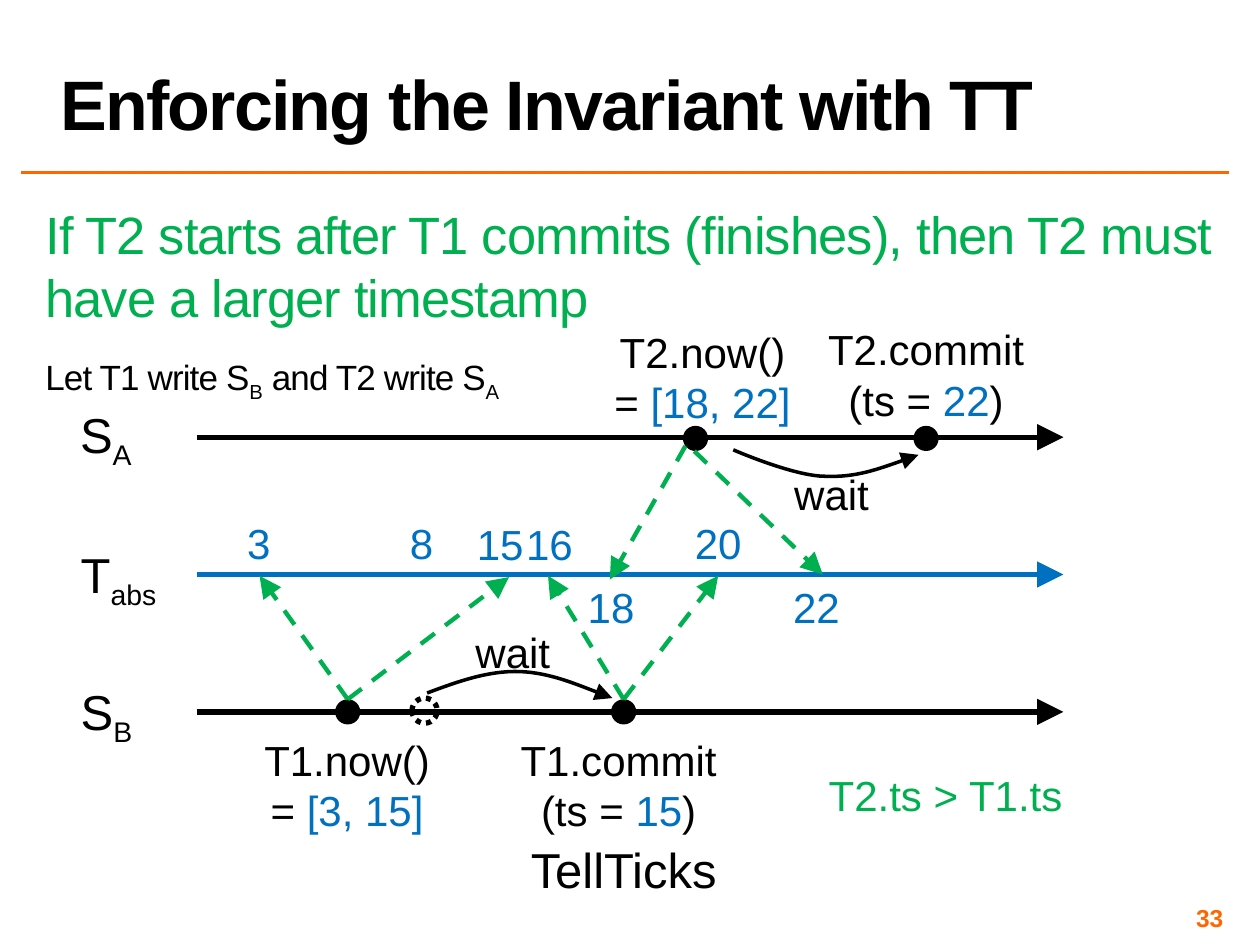
from typing import NamedTuple

from lxml.etree import SubElement
from pptx import Presentation
from pptx.dml.color import RGBColor
from pptx.enum.dml import MSO_LINE_DASH_STYLE as Dash
from pptx.enum.shapes import MSO_CONNECTOR, MSO_SHAPE
from pptx.enum.text import MSO_ANCHOR as Anchor, PP_ALIGN as Align
from pptx.oxml.ns import qn
from pptx.util import Inches, Pt


class Theme:
    font = "Arial"
    black = RGBColor(0x00, 0x00, 0x00)
    blue = RGBColor(0x00, 0x70, 0xC0)
    green = RGBColor(0x00, 0xB0, 0x50)
    orange = RGBColor(0xFF, 0x66, 0x00)
    title, body, axis, label, note, number = 40, 30, 28, 24, 20, 14


class Span(NamedTuple):
    text: str
    color: RGBColor = Theme.black
    subscript: bool = False


class Para(NamedTuple):
    spans: list[Span]
    size: float = Theme.label
    align: Align = Align.CENTER
    bold: bool = False
    spacing: float = 0
    before: float = 0
    after: float = 0
    line_spacing: float = 1


class Label(NamedTuple):
    left: float
    top: float
    width: float
    height: float
    paras: list[Para]


class Line(NamedTuple):
    start: tuple[float, float]
    end: tuple[float, float]
    color: RGBColor
    width: float
    dash: Dash | None = None
    arrow: bool = True


def add_text(page, label: Label, wrap=False, anchor=Anchor.TOP, inset=None) -> None:
    box = page.shapes.add_textbox(*map(Inches, label[:4]))
    frame = box.text_frame
    frame.word_wrap = wrap
    frame.vertical_anchor = anchor
    if inset is not None:
        frame.margin_left = frame.margin_right = Inches(inset)
        frame.margin_top = frame.margin_bottom = Inches(inset)
    for index, item in enumerate(label.paras):
        para = frame.add_paragraph() if index else frame.paragraphs[0]
        para.alignment = item.align
        para.space_before, para.space_after = Pt(item.before), Pt(item.after)
        para.line_spacing = item.line_spacing
        for span in item.spans:
            run = para.add_run()
            run.text = span.text
            run.font.name = Theme.font
            run.font.size = Pt(item.size)
            run.font.bold = item.bold
            run.font.color.rgb = span.color
            properties = run.font._element
            if item.spacing:
                properties.set("spc", str(round(item.spacing * 100)))
            if span.subscript:
                properties.set("baseline", "-25000")


def add_arrowhead(shape) -> None:
    SubElement(shape.line._get_or_add_ln(), qn("a:tailEnd"),
               type="triangle", w="lg", len="lg")


def add_line(page, line: Line) -> None:
    connector = page.shapes.add_connector(
        MSO_CONNECTOR.STRAIGHT, *map(Inches, line.start + line.end))
    connector.line.color.rgb = line.color
    connector.line.width = Pt(line.width)
    if line.dash:
        connector.line.dash_style = line.dash
    if line.arrow:
        add_arrowhead(connector)
    SubElement(connector._element.spPr, qn("a:effectLst"))


def add_event(page, x: float, y: float, planned: bool = False) -> None:
    """Draw an event centred on x, y: a solid dot, or a dotted ring if planned."""
    size = 0.2
    dot = page.shapes.add_shape(
        MSO_SHAPE.OVAL, *map(Inches, (x - size / 2, y - size / 2, size, size)))
    dot.shadow.inherit = False
    if planned:
        dot.fill.background()
        dot.line.color.rgb = Theme.black
        dot.line.width = Pt(3)
        dot.line.dash_style = Dash.ROUND_DOT
    else:
        dot.fill.solid()
        dot.fill.fore_color.rgb = Theme.black
        dot.line.fill.background()


def add_wait_arc(page, points: list[tuple[float, float]]) -> None:
    """Draw an arrow along Bezier curves: a start, then three points a curve."""
    start, *rest = [(Inches(x), Inches(y)) for x, y in points]
    builder = page.shapes.build_freeform(*start)
    builder.add_line_segments(rest, close=False)
    arc = builder.convert_to_shape()
    outline = arc._element.find(".//" + qn("a:path"))
    segments = outline.findall(qn("a:lnTo"))
    for first in range(0, len(segments), 3):
        curve = SubElement(outline, qn("a:cubicBezTo"))
        for segment in segments[first:first + 3]:
            curve.append(segment[0])
            outline.remove(segment)
    arc.shadow.inherit = False
    arc.fill.background()
    arc.line.color.rgb = Theme.black
    arc.line.width = Pt(2)
    add_arrowhead(arc)


def axis_name(left, top, width, name, subscript="") -> Label:
    spans = [Span(name)] + ([Span(subscript, subscript=True)] if subscript else [])
    return Label(left, top, width, 0.57, [Para(spans, Theme.axis)])


def event_label(left, top, width, heading, before, value, after="") -> Label:
    spans = [Span(before), Span(value, Theme.blue)] + ([Span(after)] if after else [])
    return Label(left, top, width, 0.91, [Para([Span(heading)]), Para(spans)])


def short_label(left, top, width, text, color) -> Label:
    return Label(left, top, width, 0.5, [Para([Span(text, color)])])


SA_Y, TABS_Y, SB_Y = 3.47, 4.56, 5.65
AXES = [(SA_Y, Theme.black), (TABS_Y, Theme.blue), (SB_Y, Theme.black)]
EVENTS = [(2.76, SB_Y), (4.95, SB_Y), (5.52, SA_Y + 0.01), (7.35, SA_Y + 0.01)]
BOUNDS = [
    ((2.76, 5.55), (2.06, 4.57)), ((2.76, 5.55), (4.04, 4.58)),
    ((4.95, 5.55), (4.35, 4.57)), ((4.95, 5.55), (5.7, 4.57)),
    ((5.44, 3.54), (4.84, 4.6)), ((5.51, 3.58), (6.53, 4.56)),
]
WAITS = [
    [(3.39, 5.5), (3.63, 5.41), (3.88, 5.32), (4.13, 5.33),
     (4.37, 5.34), (4.86, 5.54), (4.86, 5.54)],
    [(5.82, 3.57), (5.82, 3.57), (6.3, 3.78), (6.55, 3.78),
     (6.79, 3.79), (7.04, 3.7), (7.29, 3.61)],
]
TICKS = [
    (1.86, 4.06, 0.39, "3"), (3.15, 4.06, 0.39, "8"), (3.68, 4.07, 0.58, "15"),
    (4.07, 4.07, 0.58, "16"), (4.56, 4.57, 0.58, "18"), (5.41, 4.06, 0.58, "20"),
    (6.19, 4.57, 0.58, "22"),
]
LABELS = [
    axis_name(0.52, 3.16, 0.64, "S", "A"),
    axis_name(0.53, 4.27, 0.82, "T", "abs"),
    axis_name(0.53, 5.36, 0.63, "S", "B"),
    axis_name(4.02, 6.61, 1.86, "TellTicks"),
    event_label(1.99, 5.78, 1.53, "T1.now()", "= ", "[3, 15]"),
    event_label(4.01, 5.78, 1.8, "T1.commit", "(ts = ", "15", ")"),
    event_label(4.77, 2.54, 1.61, "T2.now()", "= ", "[18, 22]"),
    event_label(6.45, 2.52, 1.8, "T2.commit", "(ts = ", "22", ")"),
    short_label(3.67, 4.92, 0.8, "wait", Theme.black),
    short_label(6.2, 3.67, 0.8, "wait", Theme.black),
    short_label(6.47, 6.06, 2.07, "T2.ts > T1.ts", Theme.green),
    *(short_label(*tick, Theme.blue) for tick in TICKS),
]
TITLE = Label(0.38, 0.02, 9.37, 1.17, [
    Para([Span("Enforcing the Invariant with TT")], Theme.title, Align.LEFT,
         bold=True, spacing=-1, line_spacing=0.8)])
NUMBER = Label(7.42, 7.17, 2.33, 0.23, [
    Para([Span("33", Theme.orange)], Theme.number, Align.RIGHT, bold=True)])
BODY = Label(0.32, 1.56, 9.4, 5.19, [
    Para([Span("If T2 starts after T1 commits (finishes), then T2 must "
               "have a larger timestamp", Theme.green)],
         Theme.body, Align.LEFT, spacing=-0.5, before=30, after=8),
    Para([Span("Let T1 write S"), Span("B", subscript=True),
          Span(" and T2 write S"), Span("A", subscript=True)],
         Theme.note, Align.LEFT, spacing=-0.5, before=8, after=8)])


def main() -> None:
    deck = Presentation()
    deck.slide_width, deck.slide_height = Inches(10), Inches(7.5)
    page = deck.slides.add_slide(deck.slide_layouts[6])
    add_line(page, Line((0.17, 1.37), (9.75, 1.37), Theme.orange, 2, arrow=False))
    add_text(page, NUMBER, wrap=True, anchor=Anchor.MIDDLE, inset=0.04)
    add_text(page, TITLE, wrap=True, anchor=Anchor.BOTTOM)
    for y, color in AXES:
        add_line(page, Line((1.56, y), (8.44, y), color, 3))
    for x, y in EVENTS:
        add_event(page, x, y)
    add_event(page, 3.37, SB_Y - 0.01, planned=True)
    for start, end in BOUNDS:
        add_line(page, Line(start, end, Theme.green, 2.5, Dash.DASH))
    for points in WAITS:
        add_wait_arc(page, points)
    for label in LABELS:
        add_text(page, label)
    add_text(page, BODY, wrap=True, inset=0.04)
    deck.save("out.pptx")


if __name__ == "__main__":
    main()
